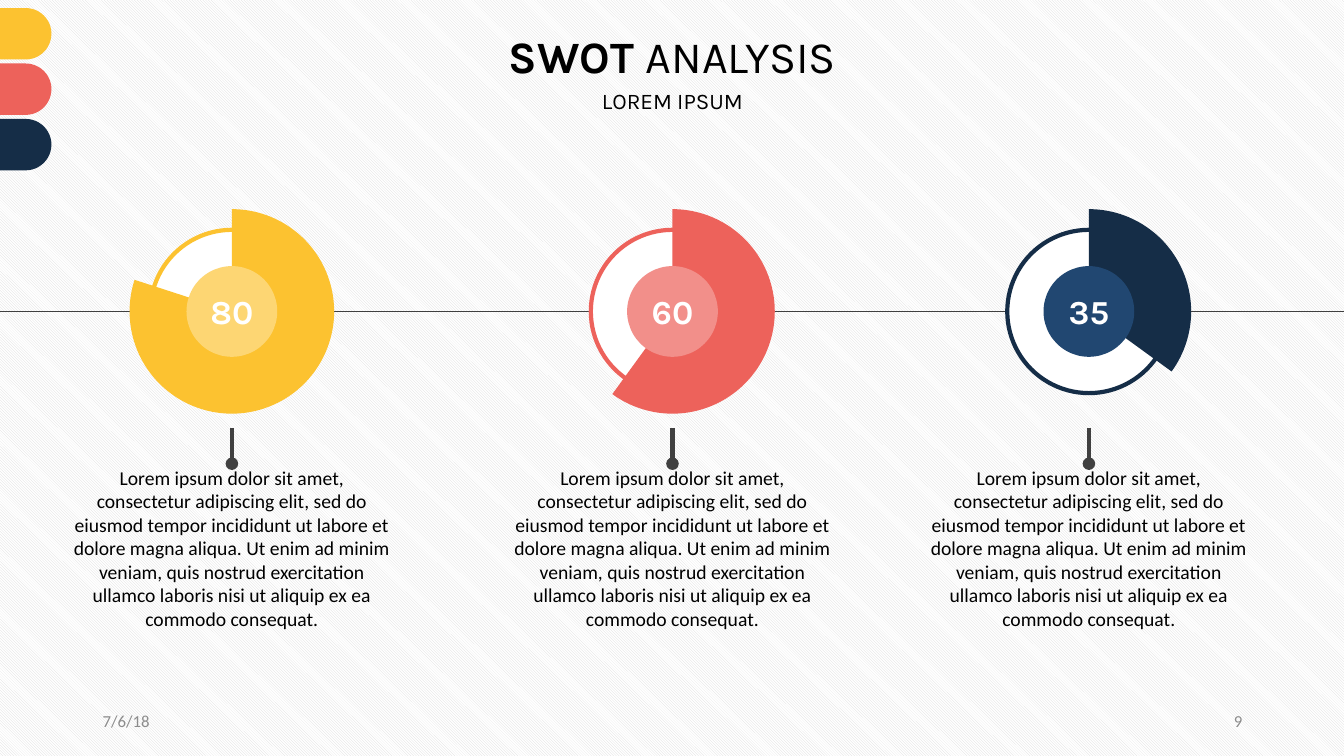
import lxml.etree
import pptx
import pptx.chart.data
import pptx.dml.color
import pptx.enum.chart
import pptx.enum.dml
import pptx.enum.shapes
import pptx.enum.text
import pptx.oxml.ns
import pptx.util

Inches = pptx.util.Inches
Pt = pptx.util.Pt
qn = pptx.oxml.ns.qn
SHAPE = pptx.enum.shapes.MSO_SHAPE
ALIGN = pptx.enum.text.PP_ALIGN

YELLOW, RED, NAVY = "FCC230", "ED625B", "152D47"
BLACK, WHITE, DARK, GREY = "000000", "FFFFFF", "404040", "8C8C8C"
LOREM = (
    "Lorem ipsum dolor sit amet, consectetur adipiscing elit, sed do eiusmod "
    "tempor incididunt ut labore et dolore magna aliqua. Ut enim ad minim veniam, "
    "quis nostrud exercitation ullamco laboris nisi ut aliquip ex ea commodo consequat."
)
GAUGES = [  # centre, value, colour, hub colour
    (2.3, 80, YELLOW, "FDD673"),
    (6.67, 60, RED, "F28F8A"),
    (10.8, 35, NAVY, "214771"),
]
AXIS_Y = 3.09
RING, HUB = 1.62, 0.9
CHART_W, CHART_H, PIE = 2.76, 2.31, 2.03


def rgb(value):
    return pptx.dml.color.RGBColor.from_string(value)


def apply(target, values):
    """Set each attribute of target named in values."""
    for name, value in values.items():
        setattr(target, name, value)


class SlideBuilder:
    heading_font = "Karla"
    body_font = "Calibri"

    def __init__(self, slide):
        self.s = slide

    def background(self, fore, back):
        fill = self.s.background.fill
        fill.patterned()
        fill.pattern = pptx.enum.dml.MSO_PATTERN.LIGHT_DOWNWARD_DIAGONAL
        fill.fore_color.rgb = rgb(fore)
        fill.back_color.rgb = rgb(back)

    def shape(self, kind, x, y, w, h, fill, line=None, width=3):
        sp = self.s.shapes.add_shape(kind, Inches(x), Inches(y), Inches(w), Inches(h))
        sp.shadow.inherit = False
        sp.fill.solid()
        sp.fill.fore_color.rgb = rgb(fill)
        if line:
            sp.line.color.rgb = rgb(line)
            sp.line.width = Pt(width)
        else:
            sp.line.fill.background()
        return sp

    def disc(self, cx, cy, size, fill, line=None):
        return self.shape(SHAPE.OVAL, cx - size / 2, cy - size / 2, size, size, fill, line)

    def set_text(self, sp, runs, size, font, color, align=ALIGN.CENTER, spacing=None, inset=0):
        """Fill a shape with one paragraph of (text, bold) runs."""
        tf = sp.text_frame
        apply(tf, {
            "word_wrap": True,
            "vertical_anchor": pptx.enum.text.MSO_ANCHOR.MIDDLE,
            "margin_left": Inches(inset),
            "margin_right": Inches(inset),
            "margin_top": Inches(inset / 2),
            "margin_bottom": Inches(inset / 2),
        })
        p = tf.paragraphs[0]
        apply(p, {"alignment": align, "line_spacing": spacing})
        for text, bold in runs:
            r = p.add_run()
            r.text = text
            apply(r.font, {"size": Pt(size), "name": font, "bold": bold})
            r.font.color.rgb = rgb(color)

    def text(self, x, y, w, h, runs, size, font, color, grow=True, **layout):
        sp = self.s.shapes.add_textbox(Inches(x), Inches(y), Inches(w), Inches(h))
        self.set_text(sp, runs, size, font, color, **layout)
        if grow:
            sp.text_frame.auto_size = pptx.enum.text.MSO_AUTO_SIZE.SHAPE_TO_FIT_TEXT

    def line(self, x1, y1, x2, y2, color, width, end=None):
        c = self.s.shapes.add_connector(
            pptx.enum.shapes.MSO_CONNECTOR.STRAIGHT,
            Inches(x1), Inches(y1), Inches(x2), Inches(y2))
        c.line.color.rgb = rgb(color)
        c.line.width = Pt(width)
        props = c._element.spPr
        if end:
            lxml.etree.SubElement(props.find(qn("a:ln")), qn("a:tailEnd"), type=end)
        lxml.etree.SubElement(props, qn("a:effectLst"))

    def pie(self, cx, cy, value, color):
        """Draw a pie whose remainder up to 100 stays unfilled."""
        data = pptx.chart.data.CategoryChartData()
        data.categories = ["1", "2"]
        data.add_series("Series 1", (value, 100 - value))
        chart = self.s.shapes.add_chart(
            pptx.enum.chart.XL_CHART_TYPE.PIE,
            Inches(cx - CHART_W / 2), Inches(cy - CHART_H / 2),
            Inches(CHART_W), Inches(CHART_H), data).chart
        apply(chart, {"has_title": False, "has_legend": False})
        apply(chart.font, {"size": Pt(10), "name": self.body_font})
        chart.font.color.rgb = rgb(BLACK)
        plot = chart.plots[0]
        plot.vary_by_categories = True
        filled, rest = (plot.series[0].points[i].format for i in range(2))
        filled.fill.solid()
        filled.fill.fore_color.rgb = rgb(color)
        rest.fill.background()
        for part in (filled, rest):
            part.line.fill.background()
        self.fix_plot_size(chart)

    def fix_plot_size(self, chart):
        """Centre the plot at the pie's diameter."""
        area = chart._chartSpace.find(".//" + qn("c:plotArea"))
        layout = area.find(qn("c:layout"))
        if layout is None:
            layout = lxml.etree.Element(qn("c:layout"))
            area.insert(0, layout)
        manual = lxml.etree.SubElement(layout, qn("c:manualLayout"))
        w, h = PIE / CHART_W, PIE / CHART_H
        values = {
            "layoutTarget": "inner", "xMode": "edge", "yMode": "edge",
            "x": (1 - w) / 2, "y": (1 - h) / 2, "w": w, "h": h,
        }
        for name, value in values.items():
            lxml.etree.SubElement(manual, qn("c:" + name), val=str(value))

    def tab(self, y, color):
        sp = self.shape(SHAPE.ROUND_2_SAME_RECTANGLE, 0, y, 0.51, 0.51, color)
        sp.rotation = 90
        sp.adjustments[0] = 0.5
        sp.adjustments[1] = 0

    def gauge(self, cx, value, color, hub_color):
        self.disc(cx, AXIS_Y, RING, WHITE, color)
        self.pie(cx, AXIS_Y, value, color)
        hub = self.disc(cx, AXIS_Y, HUB, hub_color)
        self.set_text(hub, [(str(value), True)], 24, self.heading_font, WHITE)
        self.text(cx - 1.6, 4.73, 3.2, 1.41, [(LOREM, False)], 14, self.body_font, BLACK)
        self.line(cx, 4.25, cx, 4.6, DARK, 3, end="oval")


def main():
    prs = pptx.Presentation()
    apply(prs, {"slide_width": Inches(13.33), "slide_height": Inches(7.5)})
    b = SlideBuilder(prs.slides.add_slide(prs.slide_layouts[6]))
    b.background("D9D9D9", WHITE)
    b.line(0, AXIS_Y, 13.33, AXIS_Y, DARK, 0.5)
    for i, color in enumerate((YELLOW, RED, NAVY)):
        b.tab(0.08 + 0.55 * i, color)

    b.text(1.97, 0.34, 9.4, 0.48, [("SWOT ", True), ("ANALYSIS", False)],
           32, b.heading_font, BLACK, spacing=0.9)
    b.text(1.97, 0.89, 9.4, 0.24, [("LOREM IPSUM", False)],
           16, b.heading_font, BLACK, spacing=0.9)
    for x, label, align in ((0.92, "7/6/18", ALIGN.LEFT), (9.42, "9", ALIGN.RIGHT)):
        b.text(x, 6.95, 3, 0.4, [(label, False)], 12, b.body_font, GREY,
               grow=False, align=align, inset=0.1)

    for gauge in GAUGES:
        b.gauge(*gauge)
    prs.save("out.pptx")


if __name__ == "__main__":
    main()
